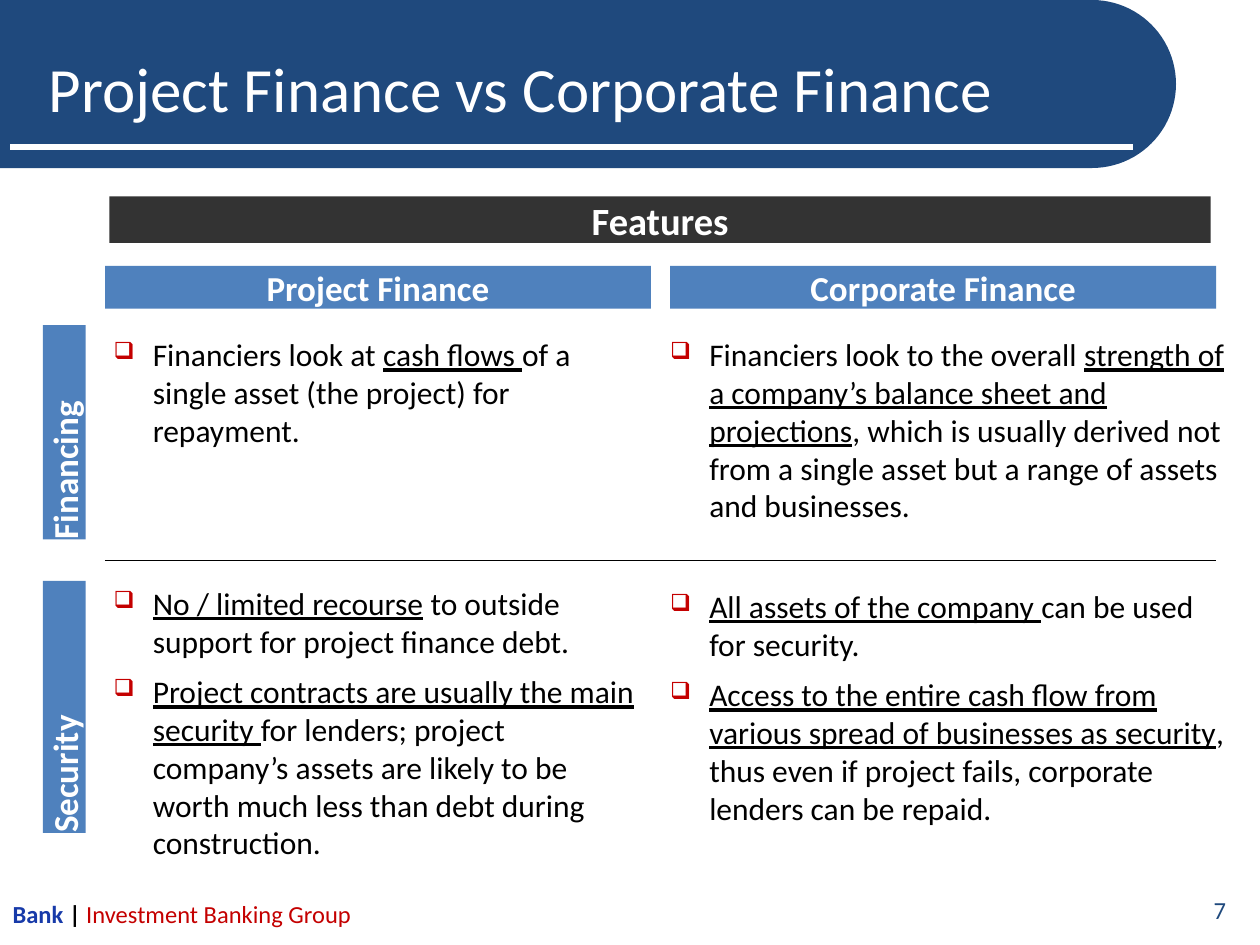
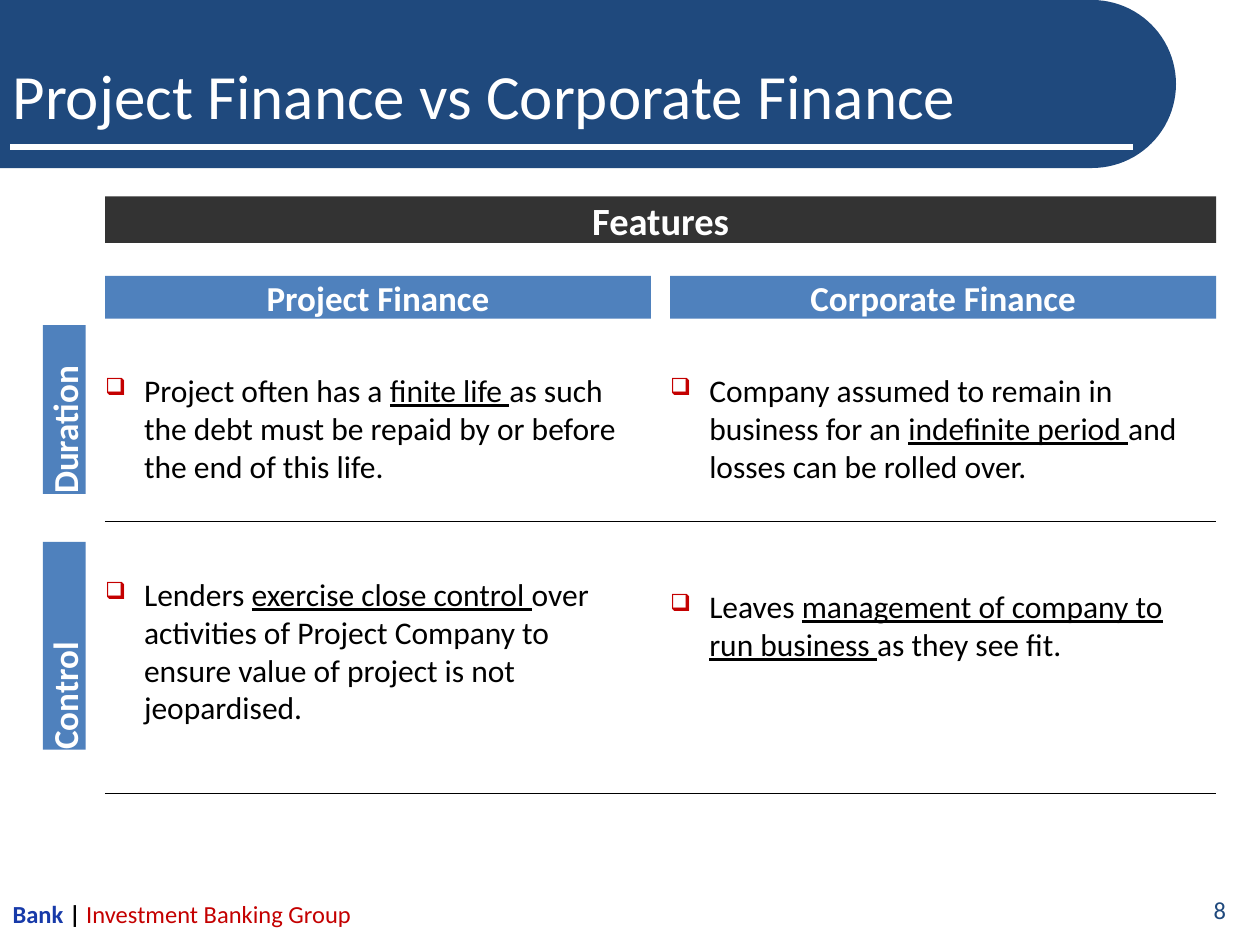
import math

from lxml import etree
from pptx import Presentation
from pptx.dml.color import RGBColor
from pptx.enum import shapes, text
from pptx.oxml import ns
from pptx.util import Pt

NAVY = RGBColor(0x1F, 0x49, 0x7D)
BLUE = RGBColor(0x4F, 0x81, 0xBD)
ROYAL = RGBColor(0x17, 0x3A, 0xA9)
RED = RGBColor(0xC4, 0x00, 0x00)
CHARCOAL = RGBColor(0x33, 0x33, 0x33)
BLACK = RGBColor(0, 0, 0)
WHITE = RGBColor(0xFF, 0xFF, 0xFF)

LEFT, RIGHT = 60, 383
COLUMN_W, TABLE_W = 312, 635
LABEL_X, LABEL_W = 24.5, 24.4
INDENT = 22.3


class Deck:
    font = "Calibri"

    def __init__(self):
        self.prs = Presentation()
        self.prs.slide_width, self.prs.slide_height = Pt(720), Pt(540)
        self.s = None

    def new_slide(self, title, title_x, title_y, number):
        self.s = self.prs.slides.add_slide(self.prs.slide_layouts[6])
        self.banner()
        self.line(6, 84, 641.5, WHITE, 3)
        self.text(title_x, title_y, 640, 72, [(title, WHITE, False)], 36)
        self.text(655, 510, 45.6, 19.4, [(str(number), NAVY, False)], 14,
                  align=text.PP_ALIGN.RIGHT)
        footer = [("Bank ", ROYAL, True), ("| ", BLACK, True),
                  ("Investment Banking Group", RED, False)]
        self.text(7.2, 513.6, 244, 17.1, footer, 14)

    def banner(self, straight=624, radius=48, steps=48):
        angles = [math.pi * (i / steps - 0.5) for i in range(steps + 1)]
        arc = [(Pt(straight + radius * math.cos(a)), Pt(radius + radius * math.sin(a)))
               for a in angles]
        outline = self.s.shapes.build_freeform(0, 0)
        outline.add_line_segments(arc + [(0, Pt(2 * radius))], close=True)
        self.paint(outline.convert_to_shape(), NAVY)

    def paint(self, sp, color):
        sp.shadow.inherit = False
        sp.fill.solid()
        sp.fill.fore_color.rgb = color
        sp.line.fill.background()

    def line(self, x, y, width, color=BLACK, weight=0.5):
        cn = self.s.shapes.add_connector(shapes.MSO_CONNECTOR.STRAIGHT,
                                         Pt(x), Pt(y), Pt(x + width), Pt(y))
        cn.line.color.rgb = color
        cn.line.width = Pt(weight)
        etree.SubElement(cn._element.spPr, ns.qn("a:effectLst"))

    def frame(self, sp, anchor=text.MSO_ANCHOR.MIDDLE):
        tf = sp.text_frame
        tf.word_wrap = True
        tf.vertical_anchor = anchor
        tf.margin_left = tf.margin_right = tf.margin_top = tf.margin_bottom = 0
        return tf

    def style(self, r, size, color, bold=False, underline=None):
        r.font.name = self.font
        r.font.size = Pt(size)
        r.font.color.rgb = color
        r.font.bold = bold
        r.font.underline = underline

    def text(self, x, y, width, height, parts, size, align=text.PP_ALIGN.LEFT):
        sp = self.s.shapes.add_textbox(Pt(x), Pt(y), Pt(width), Pt(height))
        p = self.frame(sp).paragraphs[0]
        p.alignment = align
        for words, color, bold in parts:
            r = p.add_run()
            r.text = words
            self.style(r, size, color, bold)

    def bar(self, x, y, width, height, words, color=BLUE, size=20, upright=False):
        sp = self.s.shapes.add_shape(shapes.MSO_SHAPE.RECTANGLE,
                                     Pt(x), Pt(y), Pt(width), Pt(height))
        self.paint(sp, color)
        tf = self.frame(sp)
        tf.text = words
        p = tf.paragraphs[0]
        p.alignment = text.PP_ALIGN.LEFT if upright else text.PP_ALIGN.CENTER
        self.style(p.runs[0], size, WHITE, True)
        if upright:
            tf._txBody.bodyPr.set("vert", "vert270")

    def headers(self, x, width, column_y):
        self.bar(x, 112.3, width, 26.6, "Features", CHARCOAL, 22)
        self.bar(LEFT, column_y, COLUMN_W, 24.4, "Project Finance")
        self.bar(RIGHT, column_y, COLUMN_W, 24.4, "Corporate Finance")

    def label(self, y, height, words):
        self.bar(LABEL_X, y, LABEL_W, height, words, upright=True)

    def bullets(self, x, y, width, height, items):
        sp = self.s.shapes.add_textbox(Pt(x), Pt(y), Pt(width), Pt(height))
        tf = self.frame(sp, text.MSO_ANCHOR.TOP)
        for i, item in enumerate(items):
            p = tf.add_paragraph() if i else tf.paragraphs[0]
            p.space_before = Pt(7.2 if i else 0)
            self.mark(p)
            for j, words in enumerate(item.split("_")):
                if words:
                    r = p.add_run()
                    r.text = words
                    self.style(r, 18, BLACK, underline=j % 2 == 1)

    def mark(self, p):
        pPr = p._p.get_or_add_pPr()
        pPr.set("marL", str(Pt(INDENT)))
        pPr.set("indent", str(-Pt(INDENT)))
        clr = etree.SubElement(pPr, ns.qn("a:buClr"))
        etree.SubElement(clr, ns.qn("a:srgbClr"), val=str(RED))
        etree.SubElement(pPr, ns.qn("a:buSzPct"), val="75000")
        etree.SubElement(pPr, ns.qn("a:buChar"), char="❑")


def main():
    deck = Deck()
    title = "Project Finance vs Corporate Finance"

    deck.new_slide(title, 28, 14, 7)
    deck.headers(62.6, 629.3, 152)
    deck.label(185.8, 122.4, "Financing")
    deck.bullets(65, 191.5, 300, 70, [
        "Financiers look at _cash flows _of a single asset (the project) for repayment."])
    deck.bullets(RIGHT, 191.5, 320.4, 112, [
        "Financiers look to the overall _strength of a company’s balance sheet and "
        "projections_, which is usually derived not from a single asset but a range "
        "of assets and businesses."])
    deck.line(LEFT, 320.5, TABLE_W)
    deck.label(332, 144, "Security")
    deck.bullets(65, 333.7, 300, 162, [
        "_No / limited recourse_ to outside support for project finance debt.",
        "_Project contracts are usually the main security _for lenders; project "
        "company’s assets are likely to be worth much less than debt during "
        "construction."])
    deck.bullets(RIGHT, 335.4, 320.4, 140, [
        "_All assets of the company _can be used for security.",
        "_Access to the entire cash flow from various spread of businesses as "
        "security_, thus even if project fails, corporate lenders can be repaid."])

    deck.new_slide(title, 7.2, 18, 8)
    deck.headers(LEFT, TABLE_W, 157.7)
    deck.label(185.8, 96.5, "Duration")
    deck.bullets(LEFT, 212, 306, 70, [
        "Project often has a _finite life _as such the debt must be repaid by or "
        "before the end of this life."])
    deck.bullets(RIGHT, 212, 306, 70, [
        "Company assumed to remain in business for an _indefinite period _and "
        "losses can be rolled over."])
    deck.line(LEFT, 298, TABLE_W)
    deck.label(309.6, 118.8, "Control")
    deck.bullets(LEFT, 328.6, 306, 90, [
        "Lenders _exercise close control _over activities of Project Company to "
        "ensure value of project is not jeopardised."])
    deck.bullets(RIGHT, 335.4, 306, 48, [
        "Leaves _management of company to run business _as they see fit."])
    deck.line(LEFT, 453.6, TABLE_W)

    deck.prs.save("out.pptx")


if __name__ == "__main__":
    main()
